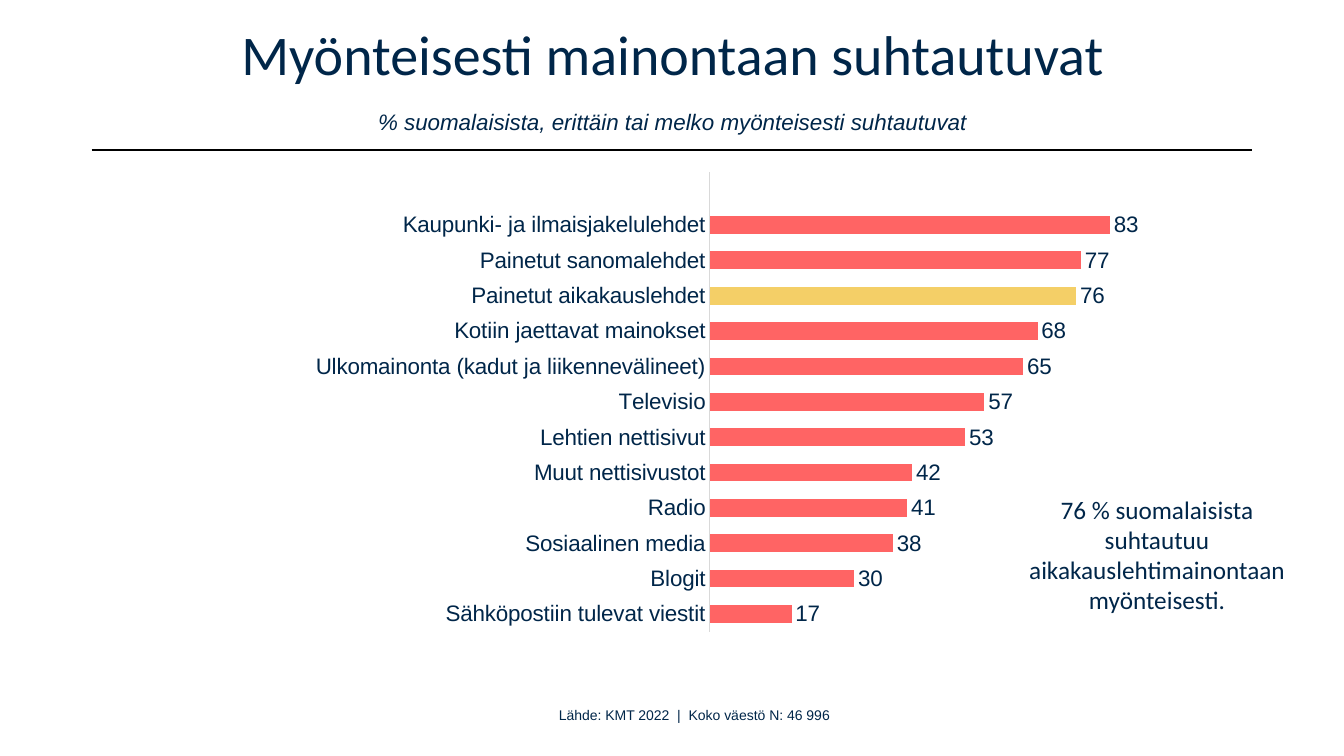
from dataclasses import dataclass

from lxml import etree
from pptx import Presentation
from pptx.chart.data import CategoryChartData
from pptx.dml.color import RGBColor
from pptx.enum.chart import XL_CHART_TYPE as ChartType
from pptx.enum.chart import XL_LABEL_POSITION as LabelPos
from pptx.enum.chart import XL_TICK_MARK as TickMark
from pptx.enum.shapes import MSO_CONNECTOR as Connector
from pptx.enum.text import MSO_ANCHOR as Anchor
from pptx.enum.text import MSO_AUTO_SIZE as AutoSize
from pptx.enum.text import PP_ALIGN as Align
from pptx.oxml.ns import qn
from pptx.slide import Slide
from pptx.util import Inches, Pt

COLORS = {"navy": "002649", "black": "000000", "axis": "D9D9D9",
          "coral": "FF6464", "yellow": "F4CF67"}
HIGHLIGHT = "Painetut aikakauslehdet"
SHARES = {
    "Sähköpostiin tulevat viestit": 17,
    "Blogit": 30,
    "Sosiaalinen media": 38,
    "Radio": 41,
    "Muut nettisivustot": 42,
    "Lehtien nettisivut": 53,
    "Televisio": 57,
    "Ulkomainonta (kadut ja liikennevälineet)": 65,
    "Kotiin jaettavat mainokset": 68,
    HIGHLIGHT: 76,
    "Painetut sanomalehdet": 77,
    "Kaupunki- ja ilmaisjakelulehdet": 83,
}
PLOT_LAYOUT = {"layoutTarget": "inner", "xMode": "edge", "yMode": "edge",
               "x": 0.532, "y": 0.001, "w": 0.416, "h": 0.916}


@dataclass
class Line:
    text: str
    size: float
    name: str = "Arial"
    italic: bool = False


@dataclass
class Box:
    left: float
    top: float
    width: float
    height: float
    lines: list[Line]
    frame: dict
    spacing: Pt | None = None


BOXES = [
    Box(0.92, 0.32, 11.5, 1.07,
        [Line("Myönteisesti mainontaan suhtautuvat", 40, "Calibri"),
         Line("% suomalaisista, erittäin tai melko myönteisesti suhtautuvat",
              16, italic=True)],
        {"vertical_anchor": Anchor.MIDDLE}, Pt(35)),
    Box(9.99, 4.85, 2.97, 1.31,
        [Line("76 % suomalaisista suhtautuu aikakauslehtimainontaan "
              "myönteisesti.", 18, "Calibri")],
        {"auto_size": AutoSize.SHAPE_TO_FIT_TEXT}),
    Box(5.39, 6.96, 2.99, 0.27,
        [Line("Lähde: KMT 2022  |  Koko väestö N: 46 996", 10)],
        {"auto_size": AutoSize.SHAPE_TO_FIT_TEXT}),
]


def rgb(key: str) -> RGBColor:
    return RGBColor.from_string(COLORS[key])


def apply(target, values: dict) -> None:
    """Set each named attribute of the target."""
    for key, value in values.items():
        setattr(target, key, value)


def style_font(font, size: float, name: str = "Arial", italic: bool = False) -> None:
    apply(font, {"size": Pt(size), "name": name, "italic": italic})
    font.color.rgb = rgb("navy")


def add_text(s: Slide, box: Box) -> None:
    """Draw one centred paragraph, with a line break between its lines."""
    sp = s.shapes.add_textbox(Inches(box.left), Inches(box.top),
                              Inches(box.width), Inches(box.height))
    tf = sp.text_frame
    apply(tf, {"word_wrap": True, **box.frame})
    p = tf.paragraphs[0]
    p.alignment = Align.CENTER
    if box.spacing:
        p.line_spacing = box.spacing
    for i, line in enumerate(box.lines):
        if i:
            p.add_line_break()
        r = p.add_run()
        r.text = line.text
        style_font(r.font, line.size, line.name, line.italic)


def add_rule(s: Slide) -> None:
    rule = s.shapes.add_connector(Connector.STRAIGHT, Inches(0.91), Inches(1.49),
                                  Inches(12.42), Inches(1.49))
    rule.line.color.rgb = rgb("black")
    rule.line.width = Pt(1)
    etree.SubElement(rule._element.spPr, qn("a:effectLst"))


def place_plot(chart) -> None:
    """Fix the inner plot area as fractions of the chart."""
    area = chart._chartSpace.chart.plotArea
    for old in area.findall(qn("c:layout")):
        area.remove(old)
    layout = etree.Element(qn("c:layout"))
    manual = etree.SubElement(layout, qn("c:manualLayout"))
    for tag, value in PLOT_LAYOUT.items():
        etree.SubElement(manual, qn(f"c:{tag}")).set("val", str(value))
    area.insert(0, layout)


def add_share_chart(s: Slide) -> None:
    data = CategoryChartData(number_format="#,##0")
    # The empty last category leaves room above the top bar.
    data.categories = [*SHARES, ""]
    data.add_series("Series 1", [*SHARES.values(), None])
    chart = s.shapes.add_chart(ChartType.BAR_CLUSTERED, Inches(0.92), Inches(1.7),
                               Inches(11.5), Inches(4.98), data).chart
    apply(chart, {"has_legend": False, "has_title": False})
    style_font(chart.font, 12, "Calibri")
    place_plot(chart)

    apply(chart.value_axis, {"minimum_scale": 0, "maximum_scale": 100,
                             "major_unit": 20, "has_major_gridlines": False,
                             "visible": False})
    axis = chart.category_axis
    apply(axis, {"major_tick_mark": TickMark.NONE, "minor_tick_mark": TickMark.NONE,
                 "has_major_gridlines": False})
    axis.format.line.color.rgb = rgb("axis")
    axis.format.line.width = Pt(0.75)
    style_font(axis.tick_labels.font, 16)

    plot = chart.plots[0]
    apply(plot, {"gap_width": 100, "vary_by_categories": False,
                 "has_data_labels": True})
    labels = plot.data_labels
    apply(labels, {"show_value": True, "position": LabelPos.OUTSIDE_END,
                   "number_format": "#,##0", "number_format_is_linked": False})
    style_font(labels.font, 16)

    series = plot.series[0]
    highlight = series.points[list(SHARES).index(HIGHLIGHT)]
    for bar, color in ((series, "coral"), (highlight, "yellow")):
        bar.format.fill.solid()
        bar.format.fill.fore_color.rgb = rgb(color)


def main() -> None:
    prs = Presentation()
    apply(prs, {"slide_width": Inches(13.33), "slide_height": Inches(7.5)})
    s = prs.slides.add_slide(prs.slide_layouts[6])
    add_rule(s)
    add_share_chart(s)
    for box in BOXES:
        add_text(s, box)
    prs.save("out.pptx")


if __name__ == "__main__":
    main()
